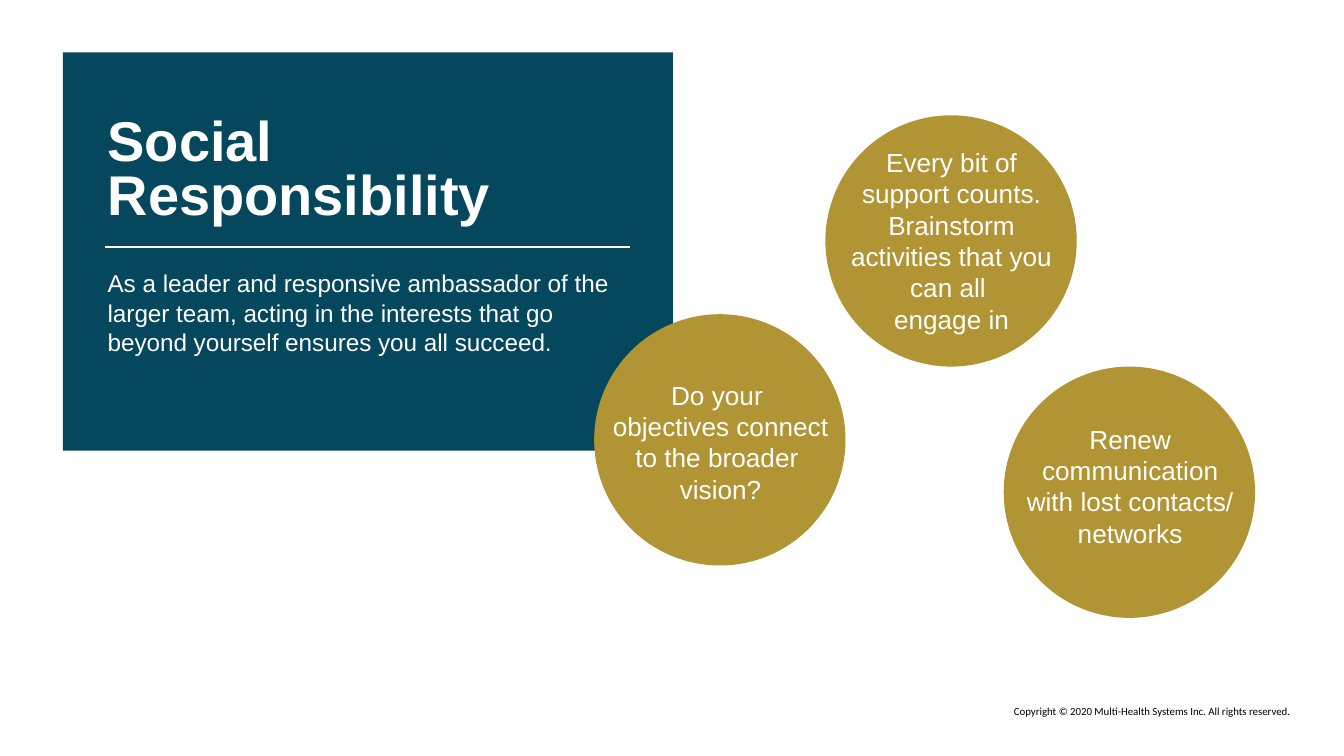
from pptx import Presentation
from pptx.dml.color import RGBColor
from pptx.enum.shapes import MSO_CONNECTOR, MSO_SHAPE
from pptx.enum.text import MSO_ANCHOR, MSO_AUTO_SIZE, PP_ALIGN
from pptx.oxml.ns import qn
from pptx.util import Cm, Pt

LEFT, CENTER, RIGHT = PP_ALIGN.LEFT, PP_ALIGN.CENTER, PP_ALIGN.RIGHT
TOP, MIDDLE = MSO_ANCHOR.TOP, MSO_ANCHOR.MIDDLE
FIT, FIXED = MSO_AUTO_SIZE.SHAPE_TO_FIT_TEXT, MSO_AUTO_SIZE.NONE
RECT, OVAL = MSO_SHAPE.RECTANGLE, MSO_SHAPE.OVAL
COLORS = {"teal": "05475C", "gold": "B19434", "white": "FFFFFF", "black": "000000"}


def write(box, text, color, fonts, paras, frame):
    tf = box.text_frame
    tf.text = text
    for name, value in frame.items():
        setattr(tf, name, value)
    for para in tf.paragraphs:
        for name, value in paras.items():
            setattr(para, name, value)
        for run in para.runs:
            for name, value in fonts.items():
                setattr(run.font, name, value)
            run.font.color.rgb = RGBColor.from_string(COLORS[color])


def draw(kind, color, *place):
    shape = shapes.add_shape(kind, *map(Cm, place))
    shape.shadow.inherit = False
    shape.fill.solid()
    shape.fill.fore_color.rgb = RGBColor.from_string(COLORS[color])
    shape.line.fill.background()
    return shape


prs = Presentation()
prs.slide_width, prs.slide_height = Cm(25.4), Cm(14.29)
slide = prs.slides.add_slide(prs.slide_layouts[1])
shapes = slide.shapes

# Panel, behind the placeholders
panel = draw(RECT, "teal", 1.19, 0.99, 11.53, 7.53)
shapes._spTree.insert(2, panel._element)

# Title and body
title, body = shapes.title, slide.placeholders[1]
for box, place in ((title, (1.78, 1.78, 10.31, 2.97)),
                   (body, (1.78, 4.95, 10.11, 3.38))):
    box.left, box.top, box.width, box.height = map(Cm, place)

write(title, "Social Responsibility", "white",
      {"name": "Arial", "size": Pt(30), "bold": True},
      {"alignment": LEFT, "line_spacing": Pt(29)},
      {"word_wrap": True, "auto_size": FIXED, "vertical_anchor": MIDDLE})
write(body, "As a leader and responsive ambassador of the larger team, acting in "
      "the interests that go beyond yourself ensures you all succeed.", "white",
      {"name": "Arial", "size": Pt(13)},
      {"alignment": LEFT, "space_before": Pt(0)},
      {"word_wrap": True, "auto_size": FIXED, "vertical_anchor": TOP})
props = body.text_frame.paragraphs[0]._p.get_or_add_pPr()
props.set("marL", "0")
props.set("indent", "0")
props.append(props.makeelement(qn("a:buNone"), {}))

# Rule under the title
rule = shapes.add_connector(MSO_CONNECTOR.STRAIGHT, Cm(1.98), Cm(4.67), Cm(11.91), Cm(4.67))
rule.line.color.rgb = RGBColor.from_string(COLORS["white"])
rule.line.width = Pt(0.75)
rule._element.spPr.append(rule._element.makeelement(qn("a:effectLst"), {}))

# Circles, each with its text box
SIZE = 4.75
circles = [
    ((15.6, 2.18), (15.8, 2.64, 4.37, 3.84),
     "Every bit of support counts. Brainstorm activities that you can all \vengage in"),
    ((11.23, 5.94), (11.23, 7.04, 4.78, 2.64),
     "Do your \vobjectives connect to the broader \nvision?"),
    ((18.97, 6.93), (18.97, 7.87, 4.78, 2.64),
     "Renew communication with lost contacts/\vnetworks"),
]
for spot, _, _ in circles:
    draw(OVAL, "gold", *spot, SIZE, SIZE)
for _, place, text in circles:
    write(shapes.add_textbox(*map(Cm, place)), text, "white",
          {"name": "Arial", "size": Pt(14)}, {"alignment": CENTER},
          {"word_wrap": True, "auto_size": FIT})

# Copyright line, raised
note = shapes.add_textbox(Cm(17.86), Cm(13.16), Cm(6.76), Cm(0.53))
write(note, "Copyright © 2020 Multi-Health Systems Inc. All rights reserved.", "black",
      {"name": "Calibri", "size": Pt(10)}, {"alignment": RIGHT},
      {"word_wrap": True, "auto_size": FIT})
note.text_frame.paragraphs[0].runs[0].font._element.set("baseline", "30000")

prs.save("out.pptx")
